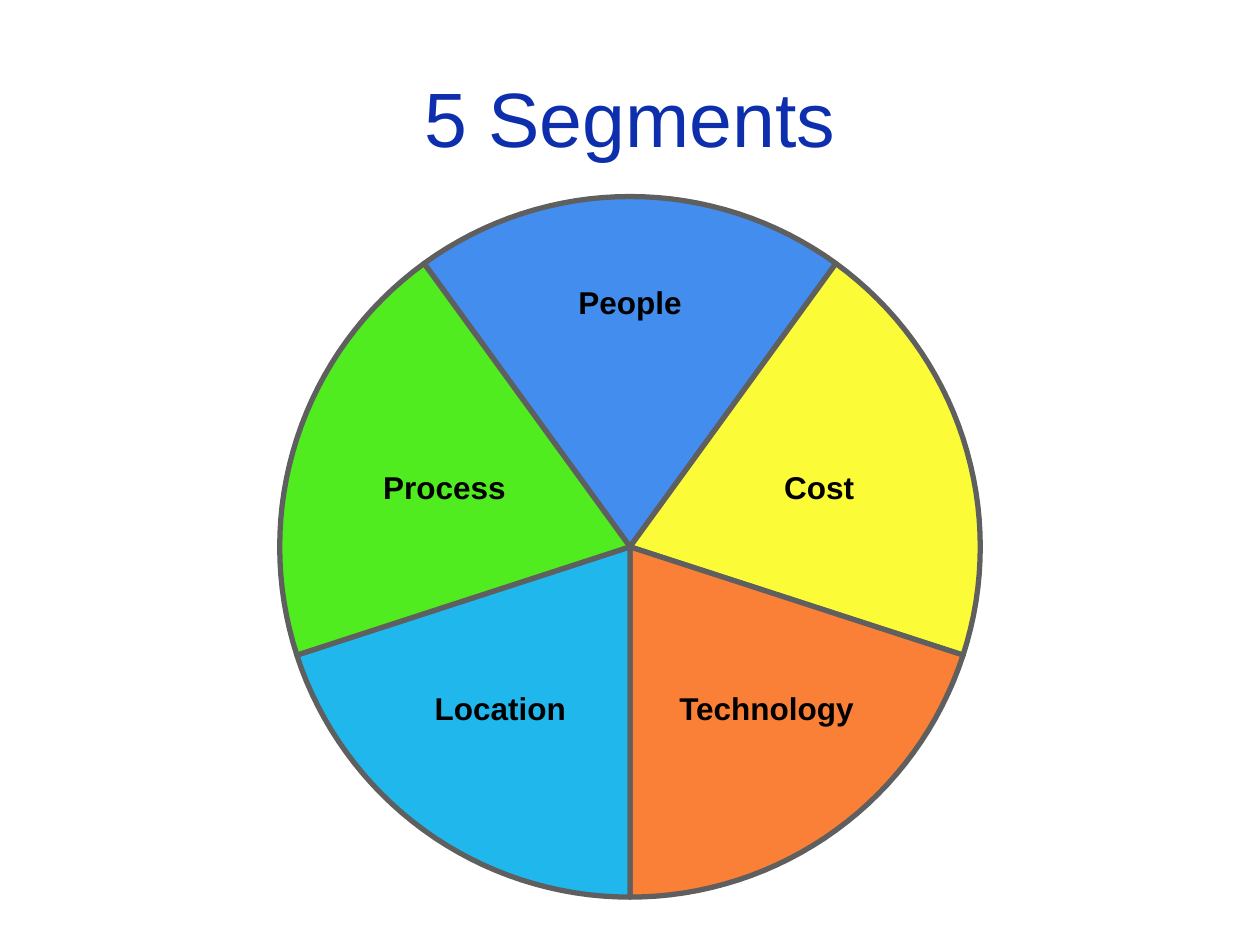
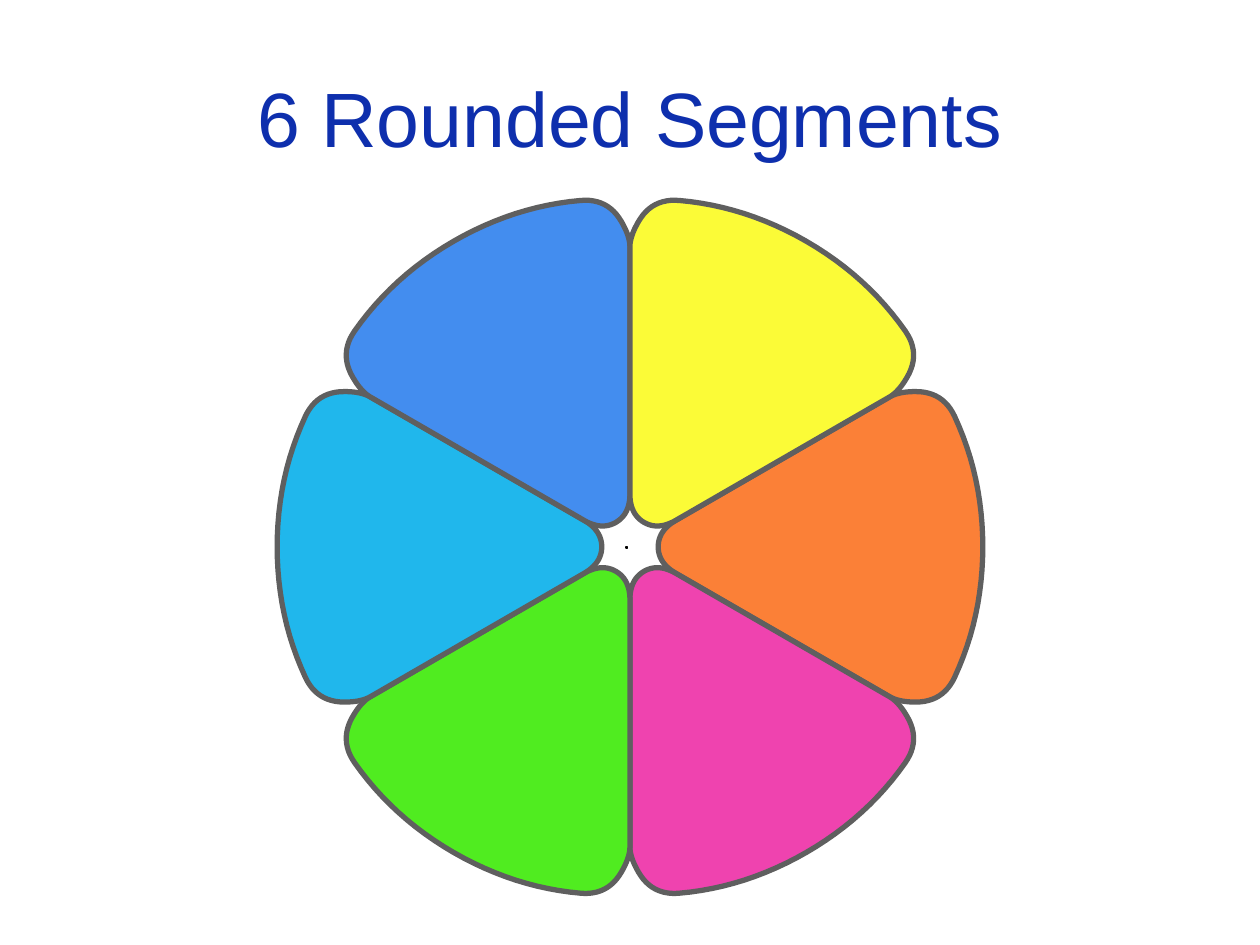
from collections import namedtuple
from math import cos, radians, sin

from pptx import Presentation
from pptx.dml.color import RGBColor
from pptx.enum.shapes import MSO_SHAPE as Preset
from pptx.enum.text import MSO_ANCHOR as Anchor, PP_ALIGN as Align
from pptx.util import Inches, Pt

Box = namedtuple("Box", "left top width height")
Wheel = namedtuple("Wheel", "x y radius")
Segment = namedtuple("Segment", "label color label_x label_y label_width")
Knot = namedtuple("Knot", "x y heading")

CELL = Inches(1)
COLUMNS, ROWS = 10, 7.5
TITLE_BOX = Box(0.5, 0.3, 9, 1.25)
PIE_BOX = Box(2.22, 1.56, 5.56, 5.56)
ROSETTE_BOX = Box(2.2, 1.54, 5.6, 5.6)

FONT = "Arial"
TITLE_BLUE = RGBColor(0x0E, 0x2F, 0xAD)
OUTLINE_GRAY = RGBColor(0x5F, 0x5F, 0x5F)
BLACK = RGBColor(0, 0, 0)
WHITE = RGBColor(0xFF, 0xFF, 0xFF)
BLUE = RGBColor(0x43, 0x8D, 0xEF)
YELLOW = RGBColor(0xFB, 0xFB, 0x37)
ORANGE = RGBColor(0xFB, 0x80, 0x37)
PINK = RGBColor(0xEF, 0x43, 0xAF)
CYAN = RGBColor(0x20, 0xB7, 0xEC)
GREEN = RGBColor(0x50, 0xEC, 0x20)

PIE_SEGMENTS = [
    Segment("People", BLUE, 0, -0.7, 1.02),
    Segment("Cost", YELLOW, 0.54, -0.17, 0.76),
    Segment("Technology", ORANGE, 0.39, 0.46, 1.6),
    Segment("Location", CYAN, -0.37, 0.46, 1.24),
    Segment("Process", GREEN, -0.53, -0.17, 1.17),
]
PETAL_COLORS = [ORANGE, PINK, GREEN, CYAN, BLUE, YELLOW]
LABEL_HEIGHT = 0.4
DOT_SIZE, DOT_SHIFT = 0.01, -0.03
ARC_STEPS = 32
CURVE_STEPS = 12


def cells(*lengths):
    """Turn grid cells into slide units."""
    return [round(length * CELL) for length in lengths]


def wheel_in(box):
    """Return the circle that fills a square box."""
    radius = box.width / 2
    return Wheel(box.left + radius, box.top + radius, radius)


def polar(distance, degrees):
    """Return the point at a distance and clockwise angle from the origin."""
    return distance * cos(radians(degrees)), distance * sin(radians(degrees))


def rotate(point, degrees):
    """Turn a point clockwise about the origin."""
    c, s = polar(1, degrees)
    return point[0] * c - point[1] * s, point[0] * s + point[1] * c


def paint(shape, fill, line, weight):
    """Give a shape a flat fill and an outline."""
    shape.shadow.inherit = False
    shape.fill.solid()
    shape.fill.fore_color.rgb = fill
    shape.line.color.rgb = line
    shape.line.width = Pt(weight)


def write(text_frame, text, size, color, bold=False):
    """Write one centred line in the shared font."""
    text_frame.text = text
    paragraph = text_frame.paragraphs[0]
    paragraph.alignment = Align.CENTER
    font = paragraph.runs[0].font
    font.name, font.size, font.bold = FONT, Pt(size), bold
    font.color.rgb = color


def wedge_outline(sweep):
    """Return a unit wedge whose middle points right."""
    arc = [polar(1, sweep * (step / ARC_STEPS - 0.5))
           for step in range(ARC_STEPS + 1)]
    return [(0, 0), *arc]


def curve(start, end):
    """Join two knots by a quadratic curve that follows both headings."""
    start_x, start_y = polar(1, start.heading)
    end_x, end_y = polar(1, end.heading)
    cross = start_x * end_y - start_y * end_x
    if abs(cross) < 0.01:
        return [start[:2], end[:2]]
    reach = ((end.x - start.x) * end_y - (end.y - start.y) * end_x) / cross
    bend = start.x + reach * start_x, start.y + reach * start_y
    points = []
    for step in range(CURVE_STEPS + 1):
        t = step / CURVE_STEPS
        points.append(tuple(
            (1 - t) ** 2 * a + 2 * t * (1 - t) * b + t ** 2 * c
            for a, b, c in zip(start[:2], bend, end[:2])))
    return points


def petal_outline(sweep):
    """Return a unit petal that points right, mirrored about its axis."""
    side = sweep / 2
    tip = Knot(0.08, 0, 90)
    side_start = Knot(*polar(0.15, side), side)
    side_end = Knot(*polar(0.85, side), side)
    crest = Knot(0.81, 0.44, 0)
    shoulder = Knot(0.92, 0.37, -65)
    rim = Knot(1, 0, -90)
    knots = [tip, side_start, side_end, crest, shoulder, rim]
    half = [tip[:2]]
    for start, end in zip(knots, knots[1:]):
        half += curve(start, end)[1:]
    return half + [(x, -y) for x, y in half[-2:0:-1]]


def add_ring(slide, wheel, outline, colors, first_angle):
    """Repeat one unit outline around a wheel, a colour for each turn."""
    for index, color in enumerate(colors):
        angle = first_angle + index * 360 / len(colors)
        turned = [rotate(point, angle) for point in outline]
        start, *rest = [cells(wheel.x + x * wheel.radius,
                              wheel.y + y * wheel.radius) for x, y in turned]
        builder = slide.shapes.build_freeform(*start)
        builder.add_line_segments(rest, close=True)
        paint(builder.convert_to_shape(), color, OUTLINE_GRAY, 3)


def add_label(slide, wheel, segment):
    """Write a segment's name at its share of the radius."""
    left = wheel.x + segment.label_x * wheel.radius - segment.label_width / 2
    top = wheel.y + segment.label_y * wheel.radius - LABEL_HEIGHT / 2
    label = slide.shapes.add_textbox(
        *cells(left, top, segment.label_width, LABEL_HEIGHT))
    label.text_frame.word_wrap = False
    write(label.text_frame, segment.label, 18, BLACK, bold=True)


def add_pie(slide, box, segments):
    """Fill a box with equal labelled wedges, the first one at the top."""
    wheel = wheel_in(box)
    colors = [segment.color for segment in segments]
    add_ring(slide, wheel, wedge_outline(360 / len(colors)), colors, -90)
    for segment in segments:
        add_label(slide, wheel, segment)


def add_rosette(slide, box, colors):
    """Fill a box with rounded petals around a small dot."""
    wheel = wheel_in(box)
    dot = slide.shapes.add_shape(Preset.RECTANGLE, *cells(
        wheel.x + DOT_SHIFT, wheel.y, DOT_SIZE, DOT_SIZE))
    paint(dot, WHITE, BLACK, 1)
    add_ring(slide, wheel, petal_outline(360 / len(colors)), colors, 0)


def add_titled_slide(deck, title_text):
    """Add a title-only slide with the shared title style."""
    slide = deck.slides.add_slide(deck.slide_layouts[5])
    title = slide.shapes.title
    title.left, title.top, title.width, title.height = cells(*TITLE_BOX)
    title.text_frame.vertical_anchor = Anchor.MIDDLE
    write(title.text_frame, title_text, 44, TITLE_BLUE)
    return slide


def main():
    """Build and save both segment slides."""
    deck = Presentation()
    deck.slide_width, deck.slide_height = cells(COLUMNS, ROWS)
    add_pie(add_titled_slide(deck, "5 Segments"), PIE_BOX, PIE_SEGMENTS)
    add_rosette(add_titled_slide(deck, "6 Rounded Segments"),
                ROSETTE_BOX, PETAL_COLORS)
    deck.save("out.pptx")


if __name__ == "__main__":
    main()
